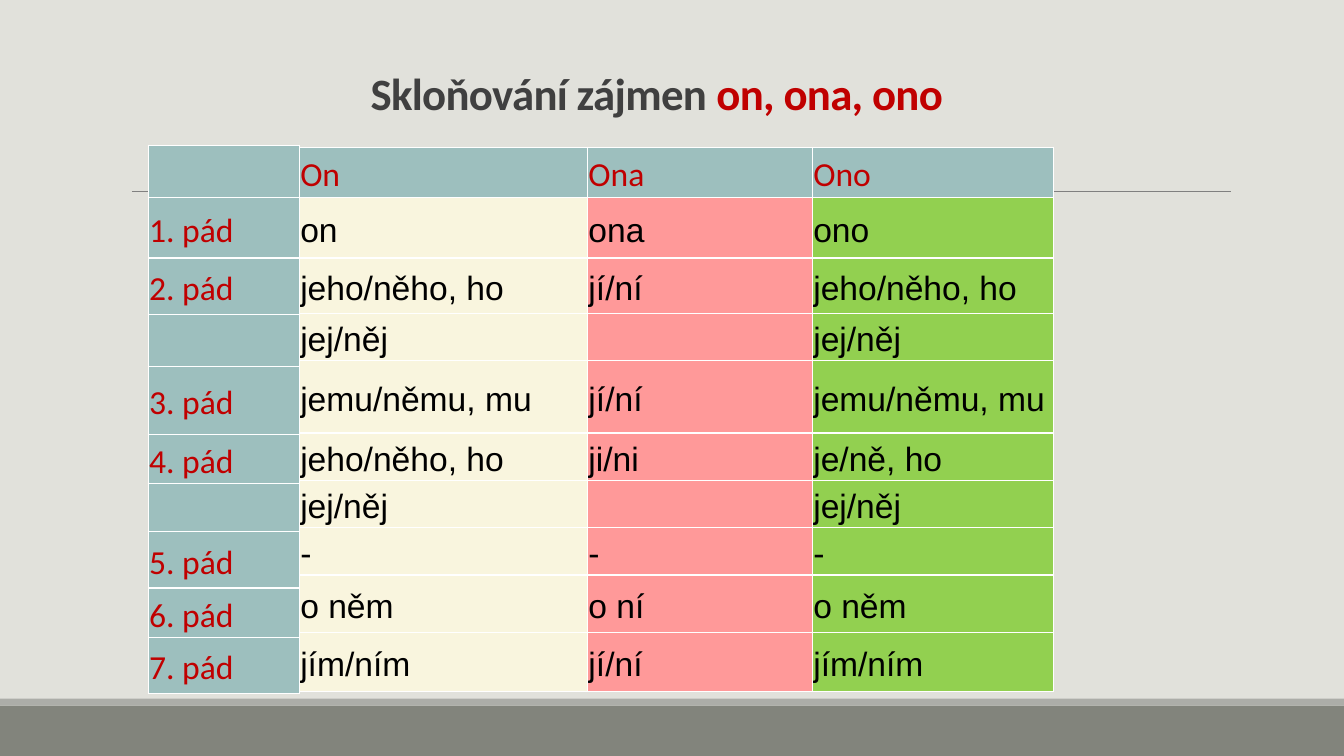
from pptx import Presentation
from pptx.dml.color import RGBColor as Rgb
from pptx.enum.shapes import MSO_CONNECTOR as Connector, MSO_SHAPE as Shape
from pptx.enum.text import MSO_ANCHOR as Anchor, PP_ALIGN as Align
from pptx.oxml import parse_xml
from pptx.oxml.ns import nsdecls
from pptx.util import Pt
from lxml.etree import SubElement

COLORS = {
    "background": "E1E1DB", "band": "82847C", "stripe": "ACADA8",
    "rule": "808080", "title": "404040", "accent": "C00000",
    "label": "9DBFBE", "on": "F9F5DE", "ona": "FF9999", "ono": "92D050",
    "text": "000000", "border": "FFFFFF",
}
HEADINGS = ["On", "Ona", "Ono"]
FORMS = [
    ["on", "ona", "ono"],
    ["jeho/něho, ho", "jí/ní", "jeho/něho, ho"],
    ["jej/něj", "", "jej/něj"],
    ["jemu/němu, mu", "jí/ní", "jemu/němu, mu"],
    ["jeho/něho, ho", "ji/ni", "je/ně, ho"],
    ["jej/něj", "", "jej/něj"],
    ["-", "-", "-"],
    ["o něm", "o ní", "o něm"],
    ["jím/ním", "jí/ní", "jím/ním"],
]
CASES = ["", "1. pád", "2. pád", "", "3. pád", "4. pád", "", "5. pád", "6. pád", "7. pád"]
FORM_HEIGHTS = [36, 43.2, 39.6, 33.8, 51.6, 33.8, 33.8, 33.8, 41, 42.5]
CASE_HEIGHTS = [37.4, 43.2, 40.3, 37.4, 48.2, 34.6, 34.6, 40.3, 34.6, 40.3]


class SlideBuilder:
    """Holds the style and the current slide and draws each kind of element."""

    def __init__(self, slide):
        self.slide = slide
        self.heading_font, self.body_font = "Calibri", "Arial"
        self.background(COLORS["background"])

    def background(self, color):
        fill = self.slide.background.fill
        fill.solid()
        fill.fore_color.rgb = Rgb.from_string(color)

    def style_run(self, run, size, font, color, bold=False):
        run.font.size = Pt(size)
        run.font.name = font
        run.font.bold = bold
        run.font.color.rgb = Rgb.from_string(COLORS[color])

    def bar(self, top, height, color):
        bar = self.slide.shapes.add_shape(Shape.RECTANGLE, 0, Pt(top), Pt(960), Pt(height))
        bar.shadow.inherit = False
        bar.fill.solid()
        bar.fill.fore_color.rgb = Rgb.from_string(COLORS[color])
        bar.line.fill.background()

    def rule(self, left, right, top):
        rule = self.slide.shapes.add_connector(
            Connector.STRAIGHT, Pt(left), Pt(top), Pt(right), Pt(top))
        rule.line.width = Pt(0.5)
        rule.line.color.rgb = Rgb.from_string(COLORS["rule"])
        SubElement(rule.element.spPr,
                   "{http://schemas.openxmlformats.org/drawingml/2006/main}effectLst")

    def title(self, parts, left, top, width, height):
        title = self.slide.shapes.title
        title.left, title.top, title.width, title.height = map(Pt, (left, top, width, height))
        frame = title.text_frame
        frame.word_wrap = True
        frame.vertical_anchor = Anchor.BOTTOM
        line = frame.paragraphs[0]
        line.alignment = Align.CENTER
        line.line_spacing = 0.85
        for text, color in parts:
            run = line.add_run()
            run.text = text
            self.style_run(run, 32, self.heading_font, color, bold=True)
            run.font._element.set("spc", "-50")

    def cell(self, cell, text, fill, font, color):
        cell.margin_left = cell.margin_right = Pt(0.7)
        cell.margin_top = cell.margin_bottom = Pt(0.7)
        cell.vertical_anchor = Anchor.MIDDLE
        properties = cell._tc.get_or_add_tcPr()
        for side in "LRTB":
            properties.append(parse_xml(
                f'<a:ln{side} {nsdecls("a")} w="12700"><a:solidFill>'
                f'<a:srgbClr val="{COLORS["border"]}"/></a:solidFill></a:ln{side}>'))
        cell.fill.solid()
        cell.fill.fore_color.rgb = Rgb.from_string(COLORS[fill])
        if text:
            cell.text_frame.text = text
            line = cell.text_frame.paragraphs[0]
            line.line_spacing = 1.15
            self.style_run(line.runs[0], 24, font, color)

    def table(self, rows, left, top, widths, heights, fills):
        """Draw a table; cells filled as labels get the heading style."""
        table = self.slide.shapes.add_table(
            len(rows), len(widths), Pt(left), Pt(top), Pt(sum(widths)), Pt(sum(heights))).table
        table.first_row = table.horz_banding = False
        for column, width in zip(table.columns, widths):
            column.width = Pt(width)
        for index, (texts, height) in enumerate(zip(rows, heights)):
            table.rows[index].height = Pt(height)
            for position, text in enumerate(texts):
                fill = fills[position] if index else "label"
                style = ((self.heading_font, "accent") if fill == "label"
                         else (self.body_font, "text"))
                self.cell(table.cell(index, position), text, fill, *style)


def main():
    deck = Presentation()
    deck.slide_width, deck.slide_height = Pt(960), Pt(540)
    builder = SlideBuilder(deck.slides.add_slide(deck.slide_layouts[5]))
    builder.bar(504, 36, "band")
    builder.bar(499, 5, "stripe")
    builder.rule(94.3, 879, 136.8)
    builder.title([("Skloňování zájmen ", "title"), ("on, ona, ono", "accent")],
                  151.2, 15.1, 635.8, 74.2)
    builder.table([HEADINGS] + FORMS, 213.8, 105.1, [205.9, 160.6, 172.1],
                  FORM_HEIGHTS, ["on", "ona", "ono"])
    builder.table([[case] for case in CASES], 105.8, 103.7, [108], CASE_HEIGHTS, ["label"])
    deck.save("out.pptx")


if __name__ == "__main__":
    main()
